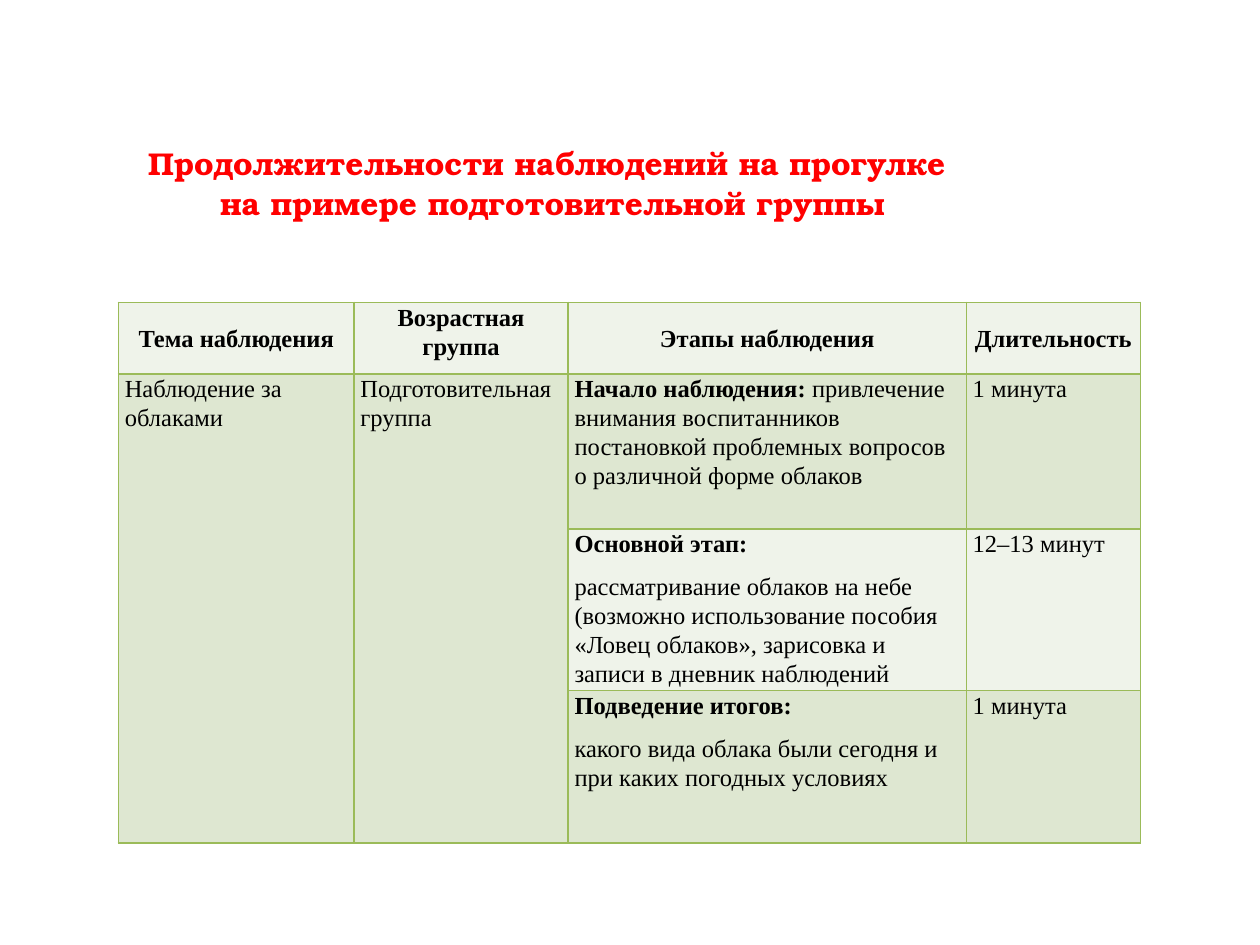
"""Build a slide with a table of observation stages and their duration."""
import itertools

import lxml.etree
import pptx
import pptx.dml.color
import pptx.enum.text
import pptx.oxml.ns
import pptx.util

COLORS = {"title": "FF0000", "text": "000000", "border": "9BBB59",
          "light": "EFF3EA", "green": "DEE7D1"}
ANCHOR = pptx.enum.text.MSO_ANCHOR
ALIGN = pptx.enum.text.PP_ALIGN
Inches = pptx.util.Inches


def add_span(para, text, size, font, color, bold):
    span = para.add_run()
    span.text = text
    span.font.size = pptx.util.Pt(size)
    span.font.name = font
    span.font.bold = bold
    span.font.color.rgb = pptx.dml.color.RGBColor.from_string(COLORS[color])


def add_borders(cell):
    properties = cell._tc.get_or_add_tcPr()
    for side in ("lnL", "lnR", "lnT", "lnB"):
        line = lxml.etree.SubElement(properties, pptx.oxml.ns.qn(f"a:{side}"), w="12700")
        fill = lxml.etree.SubElement(line, pptx.oxml.ns.qn("a:solidFill"))
        lxml.etree.SubElement(fill, pptx.oxml.ns.qn("a:srgbClr"), val=COLORS["border"])


deck = pptx.Presentation()
deck.slide_width, deck.slide_height = Inches(10), Inches(7.5)
page = deck.slides.add_slide(deck.slide_layouts[5])

title = page.shapes.title
title.left, title.top = Inches(0.28), Inches(1.12)
title.width, title.height = Inches(8.21), Inches(1.25)
title_frame = title.text_frame
title_frame.word_wrap = True
title_frame.auto_size = pptx.enum.text.MSO_AUTO_SIZE.NONE
title_frame.vertical_anchor = ANCHOR.TOP
title_frame.margin_top = 0
title_para = title_frame.paragraphs[0]
title_para.alignment = ALIGN.CENTER
title_para.line_spacing = 1.07
add_span(title_para, "Продолжительности наблюдений на прогулке ", 18, "TeX Gyre Bonum", "title", True)
title_para.add_line_break()
add_span(title_para, "на примере подготовительной группы", 18, "TeX Gyre Bonum", "title", True)

column_widths = [1.87, 1.7, 3.16, 1.38]
row_heights = [0.57, 1.23, 1.28, 1.21]
row_fills = ["light", "green", "light", "green"]
headings = ["Тема наблюдения", "Возрастная группа", "Этапы наблюдения", "Длительность"]
stages = [
    ([[("Начало наблюдения:", True),
       (" привлечение внимания воспитанников постановкой проблемных вопросов "
        "о различной форме облаков", False)]], "1 минута"),
    ([[("Основной этап:", True)],
      [("рассматривание облаков на небе (возможно использование пособия "
        "«Ловец облаков», зарисовка и записи в дневник наблюдений", False)]], "12–13 минут"),
    ([[("Подведение итогов:", True)],
      [("какого вида облака были сегодня и при каких погодных условиях", False)]], "1 минута"),
]

contents = {(0, column): [[(heading, True)]] for column, heading in enumerate(headings)}
contents[1, 0] = [[("Наблюдение за облаками", False)]]
contents[1, 1] = [[("Подготовительная группа", False)]]
for row, (stage, duration) in enumerate(stages, start=1):
    contents[row, 2] = stage
    contents[row, 3] = [[(duration, False)]]

table = page.shapes.add_table(
    len(row_heights), len(column_widths), Inches(0.94), Inches(2.4),
    Inches(sum(column_widths)), Inches(sum(row_heights))).table
table.first_row = False
table.horz_banding = False
for column, width in enumerate(column_widths):
    table.columns[column].width = Inches(width)
for row, height in enumerate(row_heights):
    table.rows[row].height = Inches(height)
for column in (0, 1):
    table.cell(1, column).merge(table.cell(3, column))

for row, column in itertools.product(range(len(row_heights)), range(len(column_widths))):
    cell = table.cell(row, column)
    add_borders(cell)
    cell.fill.solid()
    fill_name = "green" if row and column < 2 else row_fills[row]
    cell.fill.fore_color.rgb = pptx.dml.color.RGBColor.from_string(COLORS[fill_name])
    cell.margin_left = cell.margin_right = Inches(0.05)
    cell.margin_top = cell.margin_bottom = 0
    cell.vertical_anchor = ANCHOR.MIDDLE if row == 0 and column != 1 else ANCHOR.TOP
    for index, spans in enumerate(contents.get((row, column), [])):
        para = cell.text_frame.add_paragraph() if index else cell.text_frame.paragraphs[0]
        para.alignment = ALIGN.LEFT if row else ALIGN.CENTER
        para.line_spacing = 1.07
        para.space_after = pptx.util.Pt(8)
        for text, bold in spans:
            add_span(para, text, 14, "Times New Roman", "text", bold)

deck.save("out.pptx")
